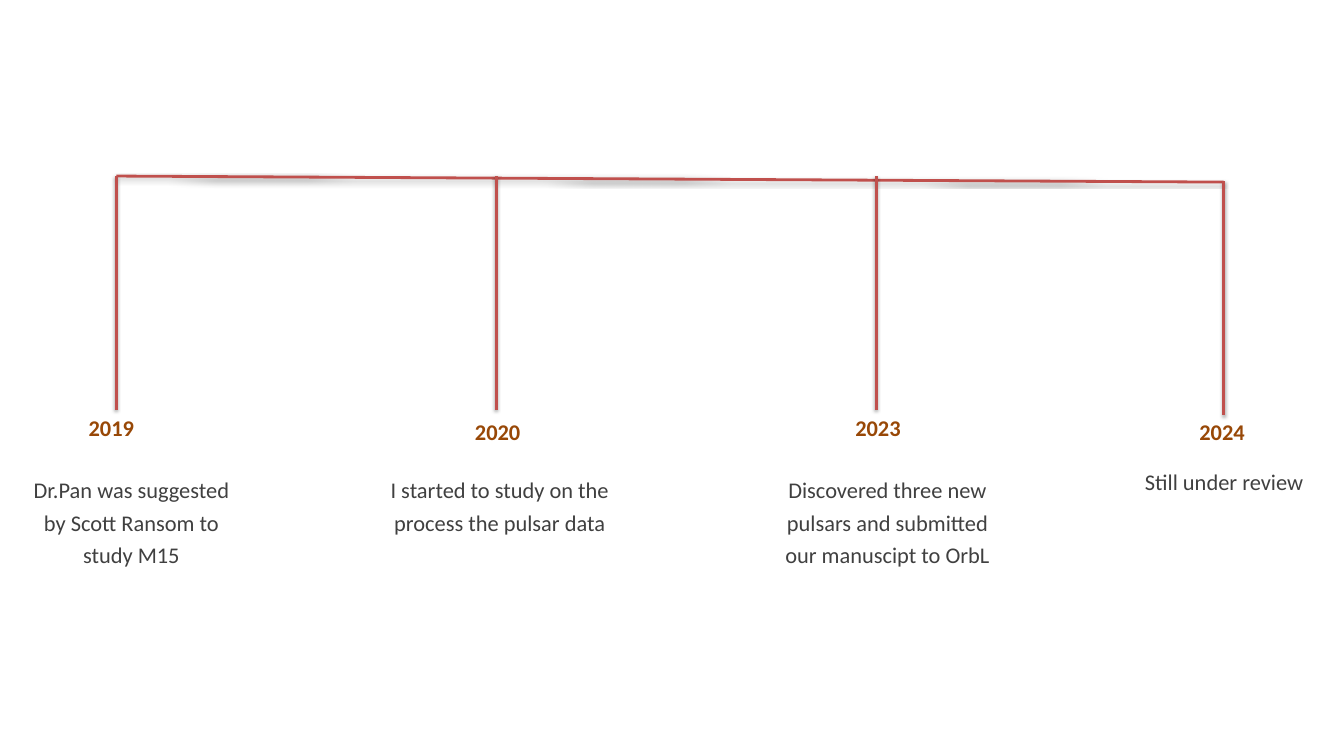
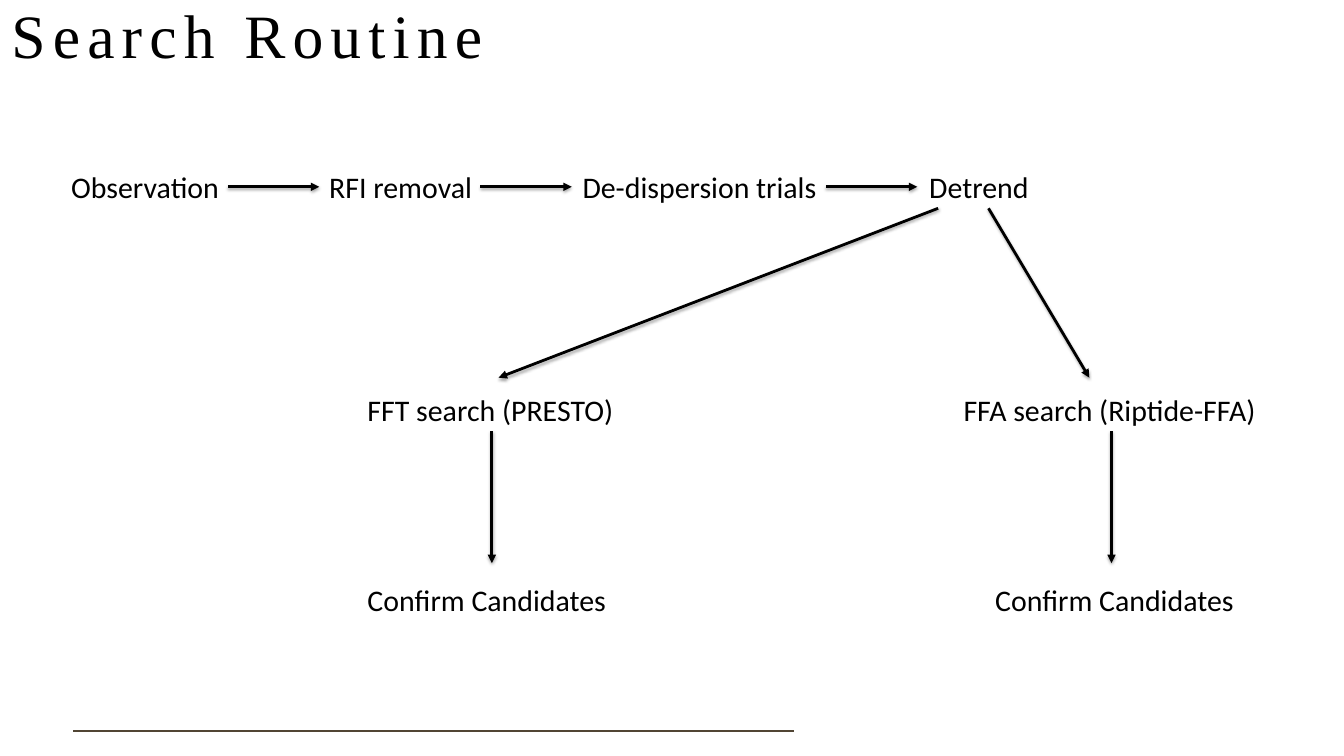
import pptx
import pptx.util
import pptx.dml.color
import pptx.enum.shapes
import pptx.enum.text
import pptx.oxml
import pptx.oxml.ns

RGB = pptx.dml.color.RGBColor
BLACK = RGB(0x00, 0x00, 0x00)
RED = RGB(0xC0, 0x50, 0x4D)
BROWN = RGB(0x98, 0x48, 0x07)
GREY = RGB(0x40, 0x40, 0x40)
OLIVE = RGB(0x51, 0x45, 0x34)

BODY, SERIF = "Calibri", "Times New Roman"
CENTER = pptx.enum.text.PP_ALIGN.CENTER

# Square grid: 20 columns by 11.25 rows
WIDE, HIGH = pptx.util.Inches(20), pptx.util.Inches(11.25)
CELL = WIDE / 20

RIGHT, BOTTOM = 3, 2  # connection sites of a box
SHADE = (
    '<a:outerShdw blurRad="40000" dist="23000" dir="5400000" rotWithShape="0">'
    '<a:srgbClr val="000000"><a:alpha val="35000"/></a:srgbClr></a:outerShdw>'
)


def grid(*cells):
    """Turn grid cells into slide lengths."""
    return [round(cell * CELL) for cell in cells]


def add_text(slide, text, left, top, width, height, size, color,
             font=BODY, bold=False, align=None, space=None, wrap=True):
    box = slide.shapes.add_textbox(*grid(left, top, width, height))
    frame = box.text_frame
    frame.word_wrap = wrap
    frame.auto_size = pptx.enum.text.MSO_AUTO_SIZE.SHAPE_TO_FIT_TEXT
    para = frame.paragraphs[0]
    para.text = text
    para.alignment = align
    para.line_spacing = space
    para.font.name = font
    para.font.size = pptx.util.Pt(size)
    para.font.bold = bold
    para.font.color.rgb = color
    return box


def add_line(slide, start, end, color, weight=3, arrow=False, shade=True):
    line = slide.shapes.add_connector(
        pptx.enum.shapes.MSO_CONNECTOR.STRAIGHT, *grid(*start, *end))
    line.line.color.rgb = color
    line.line.width = pptx.util.Pt(weight)
    space = pptx.oxml.ns.nsdecls("a")
    if arrow:
        line.line._get_or_add_ln().append(
            pptx.oxml.parse_xml(f'<a:tailEnd {space} type="triangle"/>'))
    line._element.spPr.append(pptx.oxml.parse_xml(
        f'<a:effectLst {space}>{SHADE if shade else ""}</a:effectLst>'))
    return line


def add_title(slide, text):
    box = add_text(slide, text, 0.17, 0.29, 7.25, 0.8, 66, BLACK,
                   font=SERIF, space=pptx.util.Pt(54.5))
    frame = box.text_frame
    frame.margin_left = frame.margin_right = 0
    frame.margin_top = frame.margin_bottom = 0
    props = frame.paragraphs[0]._p.get_or_add_pPr()
    props.get_or_add_defRPr().set("spc", "770")


def add_event(slide, stem, date, note):
    """One stem of the time line with its year and its note."""
    x, top = stem
    add_line(slide, (x, top), (x, top + 3.48), RED)
    year, left, row = date
    add_text(slide, year, left, row, 1, 0.5, 24, BROWN, bold=True)
    text, left, row, height = note
    add_text(slide, text, left, row, 3.49, height, 24, GREY,
             align=CENTER, space=1.2)


def add_step(slide, text, left, top, width):
    return add_text(slide, text, left, top, width, 0.64, 32, BLACK, wrap=False)


def add_flow(slide, box, site, size):
    """Arrow of a given length from the right or bottom of a box."""
    x, y = box.left / CELL, box.top / CELL
    wide, high = box.width / CELL, box.height / CELL
    if site == RIGHT:
        start = (x + wide, y + high / 2)
        end = (start[0] + size, start[1])
    else:
        start = (x + wide / 2, y + high)
        end = (start[0], start[1] + size)
    line = add_line(slide, start, end, BLACK, arrow=True)
    line.begin_connect(box, site)


def draw_times(slide):
    first, gap, last, top = 1.73, 5.655, 18.21, 2.62
    add_line(slide, (first, top), (last, 2.71), RED)
    events = [
        ((first, top), ("2019", 1.22, 6.12),
         ("Dr.Pan was suggested by Scott Ransom to study M15",
          0.21, 6.96, 1.55)),
        ((first + gap, top), ("2020", 6.97, 6.18),
         ("I started to study on the process the pulsar data",
          5.69, 6.96, 1.07)),
        ((first + 2 * gap, top), ("2023", 12.63, 6.12),
         ("Discovered three new pulsars and submitted our manuscipt to OrbL",
          11.46, 6.96, 1.55)),
        ((last, 2.7), ("2024", 17.75, 6.18),
         ("Still under review", 16.47, 6.83, 0.58)),
    ]
    for event in events:
        add_event(slide, *event)


def draw_search(slide):
    add_line(slide, (1.09, 10.88), (11.82, 10.88), OLIVE, 2.25, shade=False)
    add_title(slide, "Search Routine")

    # Steps along the top row
    row = 2.46
    chain = [("Observation", 0.96, 2.43), ("RFI removal", 4.8, 2.35),
             ("De-dispersion trials", 8.57, 3.72)]
    for text, left, width in chain:
        box = add_step(slide, text, left, row, width)
        add_flow(slide, box, RIGHT, 1.36)
    add_step(slide, "Detrend", 13.73, row, 1.7)

    # Two branches: text, left, width, arrow start and end, last step
    branches = [("FFT search (PRESTO)", 5.37, 3.9, 13.96, 7.42, 5.37),
                ("FFA search (Riptide-FFA)", 14.24, 4.6, 14.71, 16.21, 14.71)]
    for text, left, width, start, end, final in branches:
        add_line(slide, (start, 3.1), (end, 5.62), BLACK, arrow=True)
        box = add_step(slide, text, left, 5.78, width)
        add_flow(slide, box, BOTTOM, 1.96)
        add_step(slide, "Confirm Candidates", final, 8.61, 3.79)


def main():
    deck = pptx.Presentation()
    deck.slide_width, deck.slide_height = WIDE, HIGH
    for draw in (draw_times, draw_search):
        draw(deck.slides.add_slide(deck.slide_layouts[6]))
    deck.save("out.pptx")


if __name__ == "__main__":
    main()
